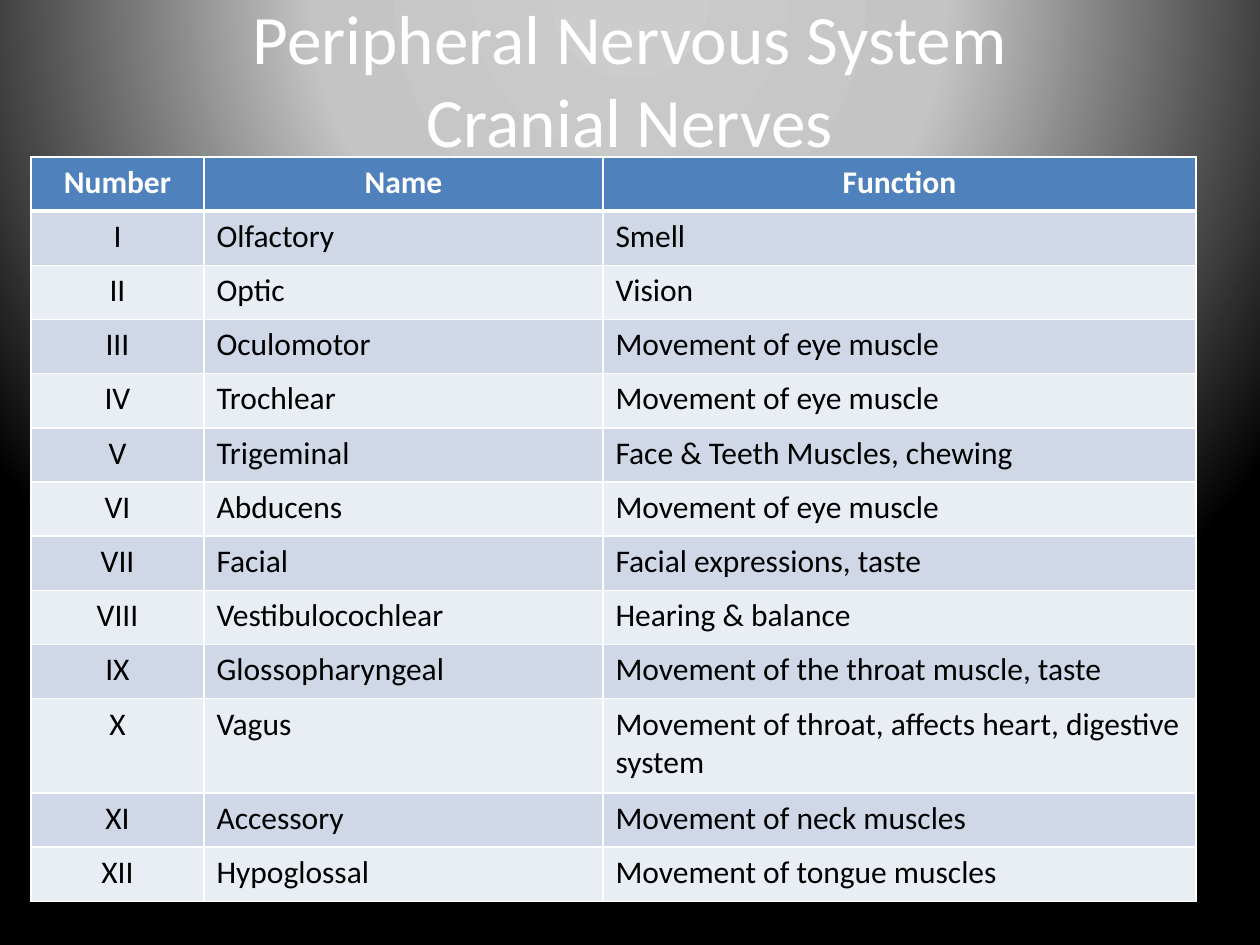
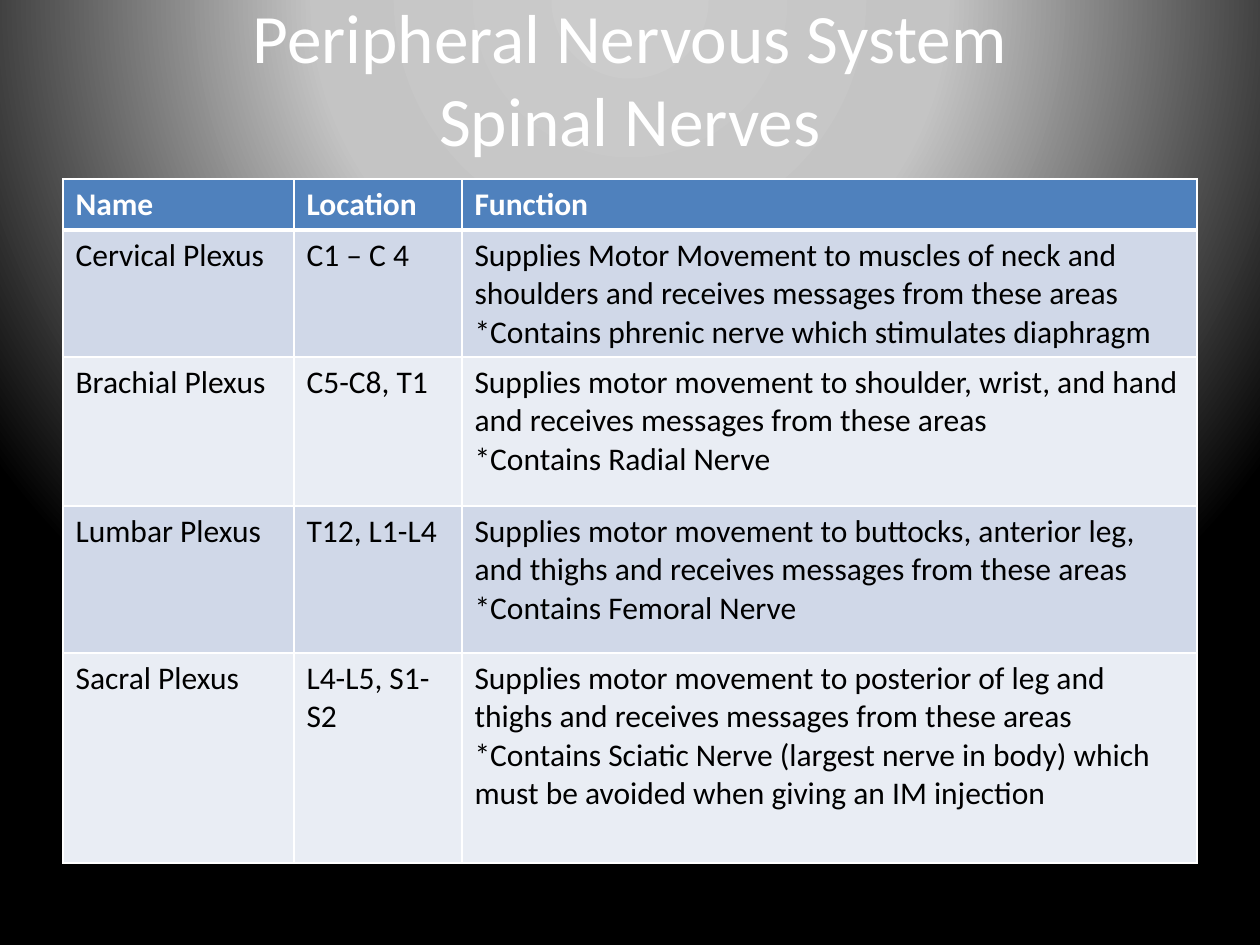
from lxml.etree import SubElement
from pptx import Presentation
from pptx.dml.color import RGBColor
from pptx.enum.text import MSO_ANCHOR, PP_ALIGN
from pptx.oxml.ns import qn
from pptx.util import Emu, Pt

SCALE = 914400 / 126
CRANIAL_NERVES = [
    ("Number", "Name", "Function"),
    ("I", "Olfactory", "Smell"),
    ("II", "Optic", "Vision"),
    ("III", "Oculomotor", "Movement of eye muscle"),
    ("IV", "Trochlear", "Movement of eye muscle"),
    ("V", "Trigeminal", "Face & Teeth Muscles, chewing"),
    ("VI", "Abducens", "Movement of eye muscle"),
    ("VII", "Facial", "Facial expressions, taste"),
    ("VIII", "Vestibulocochlear", "Hearing & balance"),
    ("IX", "Glossopharyngeal", "Movement of the throat muscle, taste"),
    ("X", "Vagus", "Movement of throat, affects heart, digestive system"),
    ("XI", "Accessory", "Movement of neck muscles"),
    ("XII", "Hypoglossal", "Movement of tongue muscles"),
]
SPINAL_NERVES = [
    ("Name", "Location", "Function"),
    ("Cervical Plexus", "C1 – C 4",
     "Supplies Motor Movement to muscles of neck and shoulders and receives messages "
     "from these areas\n*Contains phrenic nerve which stimulates diaphragm"),
    ("Brachial Plexus", "C5-C8, T1",
     "Supplies motor movement to shoulder, wrist, and hand and receives messages "
     "from these areas\n*Contains Radial Nerve"),
    ("Lumbar Plexus", "T12, L1-L4",
     "Supplies motor movement to buttocks, anterior leg, and thighs and receives messages "
     "from these areas\n*Contains Femoral Nerve"),
    ("Sacral Plexus", "L4-L5, S1-S2",
     "Supplies motor movement to posterior of leg and thighs and receives messages "
     "from these areas\n*Contains Sciatic Nerve (largest nerve in body) which must be "
     "avoided when giving an IM injection"),
]


def px(length):
    """Turn pixels into EMU."""
    return Emu(round(length * SCALE))


def color(value):
    """Turn a hex string into a colour."""
    return RGBColor.from_string(value)


class Deck:
    """Hold the shared style and the current slide."""

    font = "Calibri"
    white, black = "FFFFFF", "000000"
    header, bands = "4F81BD", ("E9EDF4", "D0D8E8")
    gradient = ((0, "CCCCCC"), (40, "C4C4C4"), (100, "000000"))
    glow = {"l": 50, "t": -80, "r": 50, "b": 180}

    def __init__(self):
        """Start an empty presentation."""
        self.presentation = Presentation()
        self.presentation.slide_width = px(1260)
        self.presentation.slide_height = px(945)
        self.slide = None

    def add_slide(self):
        """Add a blank slide with the round gradient."""
        self.slide = self.presentation.slides.add_slide(self.presentation.slide_layouts[6])
        fill = self.slide.background.fill
        fill.solid()
        properties = self.slide.element.find(".//" + qn("p:bgPr"))
        properties.remove(properties.find(qn("a:solidFill")))
        gradient = properties.makeelement(qn("a:gradFill"), {"rotWithShape": "1"})
        properties.insert(0, gradient)
        stops = SubElement(gradient, qn("a:gsLst"))
        for position, value in self.gradient:
            stop = SubElement(stops, qn("a:gs"), pos=str(position * 1000))
            SubElement(stop, qn("a:srgbClr"), val=value)
        shade = SubElement(gradient, qn("a:path"), path="circle")
        SubElement(shade, qn("a:fillToRect"),
                   {side: str(percent * 1000) for side, percent in self.glow.items()})

    def run(self, paragraph, text, size, value, bold=False):
        """Add one styled run."""
        run = paragraph.add_run()
        run.text = text
        run.font.name = self.font
        run.font.size = Pt(size)
        run.font.bold = bold
        run.font.color.rgb = color(value)

    def title(self, topic, top, height):
        """Add the two-line slide title."""
        frame = self.slide.shapes.add_textbox(px(63), px(top), px(1134), px(height)).text_frame
        frame.word_wrap = True
        frame.vertical_anchor = MSO_ANCHOR.MIDDLE
        paragraph = frame.paragraphs[0]
        paragraph.alignment = PP_ALIGN.CENTER
        self.run(paragraph, "Peripheral Nervous System", 39.6, self.white)
        paragraph.add_line_break()
        self.run(paragraph, topic, 39.6, self.white)

    def border(self, cell, side, points):
        """Draw one side of a cell."""
        line = SubElement(cell._tc.get_or_add_tcPr(), qn("a:ln" + side), w=str(Pt(points)))
        SubElement(SubElement(line, qn("a:solidFill")), qn("a:srgbClr"), val=self.white)

    def cell(self, cell, text, row, centered):
        """Fill, frame and write one cell."""
        thick = {"T": 1, "B": 0}
        for side in "LRTB":
            self.border(cell, side, 3 if thick.get(side) == row else 1)
        cell.fill.solid()
        cell.fill.fore_color.rgb = color(self.bands[row % 2] if row else self.header)
        frame = cell.text_frame
        for index, line in enumerate(text.split("\n")):
            paragraph = frame.add_paragraph() if index else frame.paragraphs[0]
            paragraph.alignment = PP_ALIGN.CENTER if centered else PP_ALIGN.LEFT
            self.run(paragraph, line, 18, self.black if row else self.white, bold=row == 0)

    def table(self, rows, left, top, height, widths, shares, centered=False):
        """Add a table whose rows share the height; centre its header and first column if asked."""
        table = self.slide.shapes.add_table(
            len(rows), len(widths), px(left), px(top), px(sum(widths)), px(height)).table
        for column, width in zip(table.columns, widths):
            column.width = px(width)
        for row, share in zip(table.rows, shares):
            row.height = px(height * share / sum(shares))
        for row, texts in enumerate(rows):
            for column, text in enumerate(texts):
                self.cell(table.cell(row, column), text, row,
                          centered and (row == 0 or column == 0))


def main():
    """Build both slides."""
    deck = Deck()
    deck.add_slide()
    deck.title("Cranial Nerves", 0, 157)
    deck.table(CRANIAL_NERVES, 31, 157, 745, (173, 399, 593),
               [54] * 10 + [94] + [54] * 2, centered=True)
    deck.add_slide()
    deck.title("Spinal Nerves", 38, 78)
    deck.table(SPINAL_NERVES, 63, 179, 684, (231, 168, 735), (51, 127, 149, 147, 210))
    deck.presentation.save("out.pptx")


if __name__ == "__main__":
    main()
